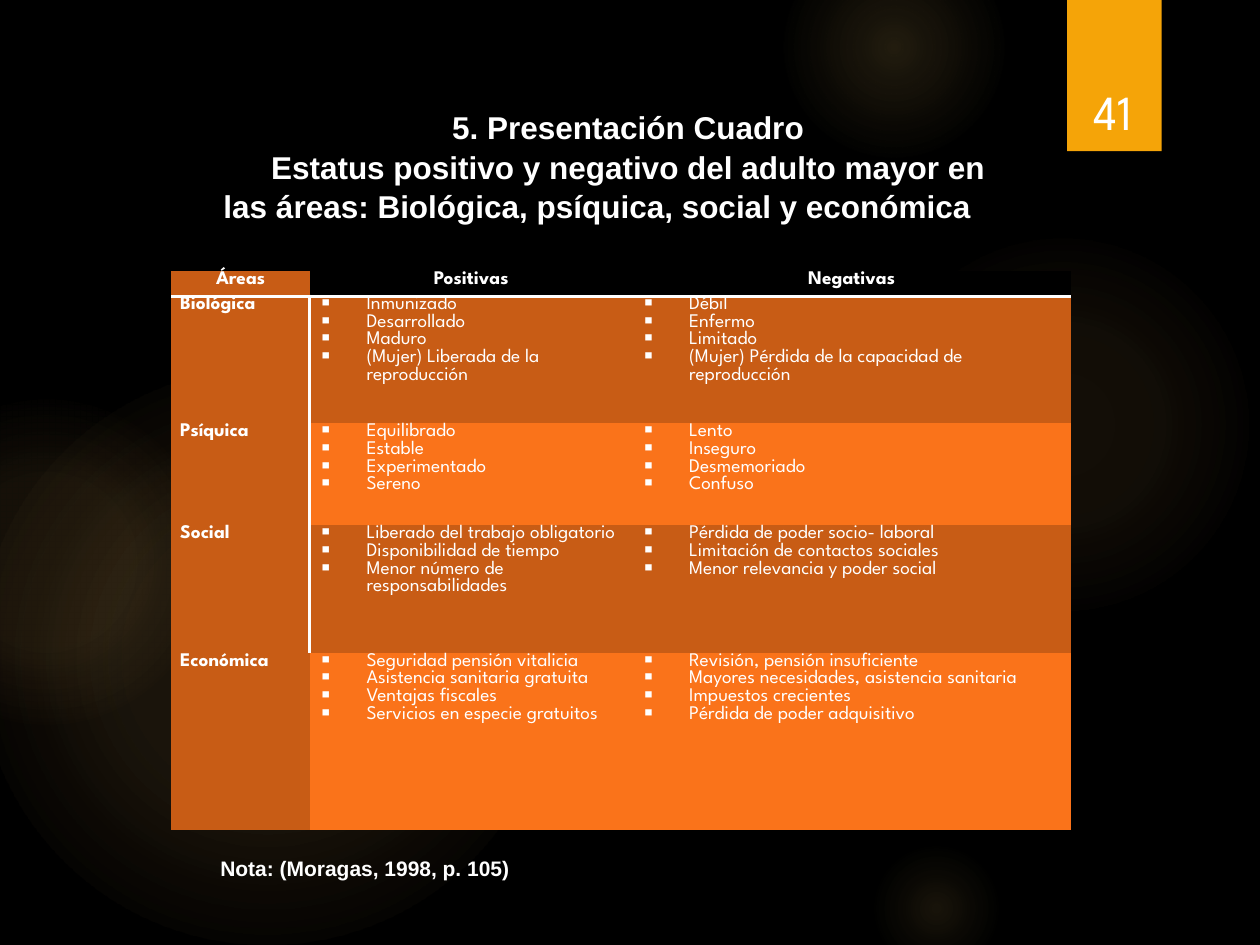
import pptx
import pptx.dml.color
import pptx.enum.shapes
import pptx.enum.text
import pptx.oxml
import pptx.oxml.ns
import pptx.util

Inches = pptx.util.Inches
Pt = pptx.util.Pt
Align = pptx.enum.text.PP_ALIGN
Anchor = pptx.enum.text.MSO_ANCHOR
Shape = pptx.enum.shapes.MSO_SHAPE
qn = pptx.oxml.ns.qn
NAMESPACE = pptx.oxml.ns.nsdecls("a")

WHITE, BLACK, GOLD, GLOW = "FFFFFF", "000000", "F5A408", "FAC96A"
RUST, ORANGE = "C85C15", "FA731A"

TITLE = [
    "5. Presentación Cuadro",
    "Estatus positivo y negativo del adulto mayor en las áreas: "
    "Biológica, psíquica, social y económica",
]
NOTE = "Nota: (Moragas, 1998, p. 105)"
PAGE_NUMBER = "41"
HEADERS = ["Áreas", "Positivas", "Negativas"]
AREAS = [
    ("Biológica",
     ["Inmunizado", "Desarrollado", "Maduro", "(Mujer) Liberada de la reproducción"],
     ["Débil", "Enfermo", "Limitado", "(Mujer) Pérdida de la capacidad de reproducción"]),
    ("Psíquica",
     ["Equilibrado", "Estable", "Experimentado", "Sereno"],
     ["Lento", "Inseguro", "Desmemoriado", "Confuso"]),
    ("Social",
     ["Liberado del trabajo obligatorio", "Disponibilidad de tiempo",
      "Menor número de responsabilidades"],
     ["Pérdida de poder socio- laboral", "Limitación de contactos sociales",
      "Menor relevancia y poder social"]),
    ("Económica",
     ["Seguridad pensión vitalicia", "Asistencia sanitaria gratuita",
      "Ventajas fiscales", "Servicios en especie gratuitos"],
     ["Revisión, pensión insuficiente", "Mayores necesidades, asistencia sanitaria",
      "Impuestos crecientes", "Pérdida de poder adquisitivo"]),
]
COLUMN_WIDTHS = [1.1, 2.56, 3.48]
ROW_HEIGHTS = [0.2, 1.01, 0.81, 1.01, 1.41]
GLOWS = [
    (6.89, 1.83, 3.08, [(0, 7), (36, 6), (69, 0)]),
    (6.22, -0.5, 1.75, [(0, 14), (36, 7), (73, 0)]),
    (6.89, 6.67, 1.08, [(0, 10), (31, 5), (66, 0)]),
    (-0.17, 2.92, 4.58, [(0, 11), (36, 10), (75, 0)]),
    (-0.92, 3.17, 2.58, [(0, 8), (36, 8), (72, 0)]),
]

TITLE_FONT = {"name": "Arial", "size": Pt(18), "bold": True}
NOTE_FONT = {"name": "Arial", "size": Pt(12), "bold": True}
NUMBER_FONT = {"name": "League Spartan", "size": Pt(28), "bold": False}
LABEL_FONT = {"name": "League Spartan", "size": Pt(11), "bold": True}
ITEM_FONT = {**LABEL_FONT, "bold": False}
CELL_MARGINS = {"margin_left": Inches(0.07), "margin_right": Inches(0.07),
                "margin_top": 0, "margin_bottom": 0}


def paint(color_owner, color):
    color_owner.rgb = pptx.dml.color.RGBColor.from_string(color)


def fill_solid(target, color):
    target.fill.solid()
    paint(target.fill.fore_color, color)


def apply(target, values):
    for name, value in values.items():
        setattr(target, name, value)


def write(frame, lines, font, align):
    frame.text = "\n".join(lines)
    for para in frame.paragraphs:
        para.alignment = align
        for span in para.runs:
            apply(span.font, font)
            paint(span.font.color, WHITE)


def set_indent(para, left, first):
    properties = para._p.get_or_add_pPr()
    properties.set("marL", str(Inches(left)))
    properties.set("indent", str(Inches(first)))
    return properties


def add_plain_shape(page, kind, *place):
    shape = page.shapes.add_shape(kind, *map(Inches, place))
    shape.shadow.inherit = False
    shape.line.fill.background()
    return shape


def add_glow(page, left, top, size, stops):
    shape = add_plain_shape(page, Shape.OVAL, left, top, size, size)
    stop_xml = "".join(
        f'<a:gs pos="{position * 1000}"><a:srgbClr val="{GLOW}">'
        f'<a:alpha val="{opacity * 1000}"/></a:srgbClr></a:gs>'
        for position, opacity in stops)
    gradient = pptx.oxml.parse_xml(
        f'<a:gradFill {NAMESPACE}><a:gsLst>{stop_xml}</a:gsLst><a:path path="circle">'
        '<a:fillToRect l="50000" t="50000" r="50000" b="50000"/></a:path></a:gradFill>')
    shape.element.spPr.find(qn("a:prstGeom")).addnext(gradient)


def add_number_tab(page):
    tab = add_plain_shape(page, Shape.RECTANGLE, 8.47, 0, 0.75, 1.2)
    fill_solid(tab, GOLD)
    tab.element.spPr.find(qn("a:effectLst")).append(pptx.oxml.parse_xml(
        f'<a:outerShdw {NAMESPACE} blurRad="{Pt(3)}" dist="{Pt(2)}" dir="5400000">'
        f'<a:srgbClr val="{BLACK}"><a:alpha val="45000"/></a:srgbClr></a:outerShdw>'))
    add_text(page, (8.49, 0.32, 0.69, 0.84), PAGE_NUMBER, NUMBER_FONT,
             Align.CENTER, Anchor.BOTTOM)


def add_text(page, place, text, font, align, anchor):
    box = page.shapes.add_textbox(*map(Inches, place))
    apply(box.text_frame, {"word_wrap": True, "vertical_anchor": anchor})
    write(box.text_frame, [text], font, align)


def place_title(page):
    title = page.shapes.title
    apply(title, dict(zip(("left", "top", "width", "height"),
                          map(Inches, (1.54, 0.81, 6.4, 1.01)))))
    apply(title.text_frame, {"word_wrap": True, "vertical_anchor": Anchor.MIDDLE,
                             "auto_size": pptx.enum.text.MSO_AUTO_SIZE.NONE})
    write(title.text_frame, TITLE, TITLE_FONT, Align.CENTER)
    for para in title.text_frame.paragraphs:
        set_indent(para, 0, 0.49)
        apply(para, {"line_spacing": 1.05, "space_before": 0})
    page.shapes.element.append(title.element)


def add_border(cell, side):
    cell._tc.get_or_add_tcPr().insert(0, pptx.oxml.parse_xml(
        f'<a:{side} {NAMESPACE} w="{Pt(2)}"><a:solidFill><a:srgbClr val="{WHITE}"/>'
        f'</a:solidFill></a:{side}>'))


def fill_cell(cell, lines, font, align, color):
    apply(cell, CELL_MARGINS)
    fill_solid(cell, color)
    write(cell.text_frame, lines, font, align)


def add_areas_table(page):
    frame = page.shapes.add_table(
        len(ROW_HEIGHTS), len(COLUMN_WIDTHS), Inches(1.36), Inches(2.15),
        Inches(sum(COLUMN_WIDTHS)), Inches(sum(ROW_HEIGHTS)))
    table = frame.table
    style = table._tbl.tblPr.find(qn("a:tableStyleId"))
    style.text = "{2D5ABB26-0587-4C30-8999-92F81FD0307C}"
    for column, width in zip(table.columns, COLUMN_WIDTHS):
        column.width = Inches(width)
    for row, height in zip(table.rows, ROW_HEIGHTS):
        row.height = Inches(height)
    for index, header in enumerate(HEADERS):
        cell = table.cell(0, index)
        fill_cell(cell, [header], LABEL_FONT, Align.CENTER, BLACK if index else RUST)
        add_border(cell, "lnB")
    for row, (area, *lists) in enumerate(AREAS, 1):
        label = table.cell(row, 0)
        fill_cell(label, [area], LABEL_FONT, Align.LEFT, RUST)
        if row < len(AREAS):
            add_border(label, "lnR")
        for column, items in enumerate(lists, 1):
            cell = table.cell(row, column)
            fill_cell(cell, items, ITEM_FONT, Align.LEFT, RUST if row % 2 else ORANGE)
            for para in cell.text_frame.paragraphs:
                set_indent(para, 0.38, -0.38).append(
                    pptx.oxml.parse_xml(f'<a:buChar {NAMESPACE} char="▪"/>'))


def main():
    deck = pptx.Presentation()
    apply(deck, {"slide_width": Inches(10), "slide_height": Inches(7.5)})
    page = deck.slides.add_slide(deck.slide_layouts.get_by_name("Title Only"))
    fill_solid(page.background, BLACK)
    for glow in GLOWS:
        add_glow(page, *glow)
    add_number_tab(page)
    add_areas_table(page)
    place_title(page)
    add_text(page, (1.65, 6.74, 5.83, 0.3), NOTE, NOTE_FONT, Align.JUSTIFY, Anchor.MIDDLE)
    deck.save("out.pptx")


if __name__ == "__main__":
    main()
